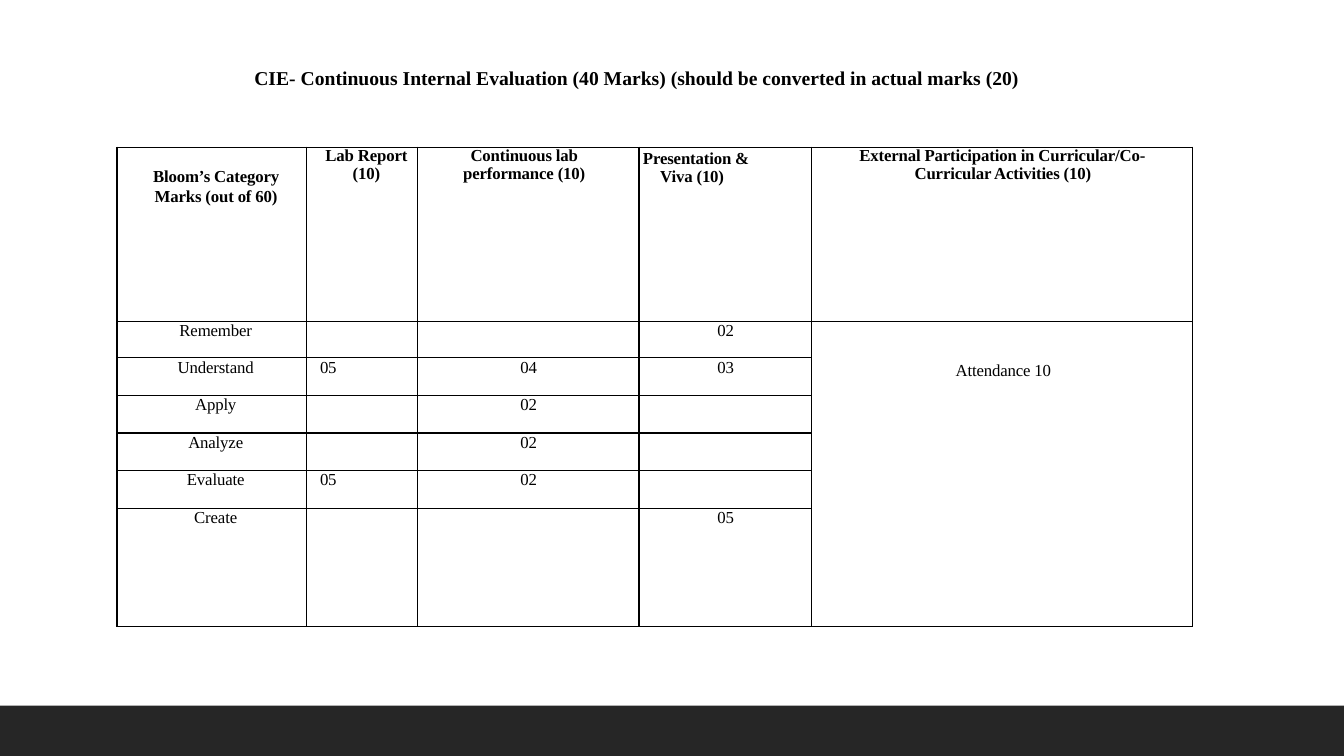
from dataclasses import dataclass

from lxml import etree
from pptx import Presentation
from pptx.dml.color import RGBColor
from pptx.enum.shapes import MSO_SHAPE
from pptx.enum.text import PP_ALIGN
from pptx.oxml.ns import qn
from pptx.util import Pt

LEFT, CENTER = PP_ALIGN.LEFT, PP_ALIGN.CENTER
RECTANGLE = MSO_SHAPE.RECTANGLE


@dataclass(frozen=True)
class Theme:
    font: str = "Times New Roman"
    ink: RGBColor = RGBColor(0, 0, 0)
    bar: RGBColor = RGBColor(0x26, 0x26, 0x26)
    title_size: float = 14
    table_size: float = 12
    border_width: float = 1


@dataclass(frozen=True)
class Line:
    """One paragraph; lengths in points, line as Pt or as a multiple."""
    text: str
    bold: bool = False
    align: PP_ALIGN = CENTER
    left: float = 0
    right: float = 0
    first: float = 0
    line: float | Pt = 1.0
    tracking: float = -0.1


@dataclass(frozen=True)
class Entry:
    row: int
    col: int
    lines: tuple[Line, ...]
    top: float = 0.3


THEME = Theme()
COL_WIDTHS = (135.4, 79.2, 158.4, 123.1, 272.2)
ROW_HEIGHTS = (124.4, 26, 26.9, 26.9, 26.9, 26.9, 84.4)
CATEGORIES = ("Remember", "Understand", "Apply", "Analyze", "Evaluate", "Create")
LAB_REPORT, LAB_WORK, VIVA, EXTERNAL = 1, 2, 3, 4
MARKS = {
    LAB_REPORT: {2: "05", 5: "05"},
    LAB_WORK: {2: "04", 3: "02", 4: "02", 5: "02"},
    VIVA: {1: "02", 2: "03", 6: "05"},
}
HEADERS = (
    Entry(0, 0, (Line("Bloom’s Category Marks (out of 60)", True, left=19.4, right=13,
                      line=Pt(13.8)),), top=14.4),
    Entry(0, LAB_REPORT, (Line("Lab Report (10)", True, left=10, right=3.6, line=0.96),),
          top=0.1),
    Entry(0, LAB_WORK, (Line("Continuous lab performance (10)", True, left=8, right=13.7,
                             line=0.96),), top=0.1),
    Entry(0, VIVA, (Line("Presentation &", True, LEFT, left=30.2, first=-27.4,
                         line=Pt(13.9)),
                    Line("Viva (10)", True, LEFT, left=15.1, line=Pt(13.4))), top=0.8),
    Entry(0, EXTERNAL, (Line("External Participation in Curricular/Co-Curricular Activities (10)",
                             True, left=20.2, right=18.7, first=-0.7, line=0.96),), top=0.1),
)
ATTENDANCE = Entry(1, EXTERNAL, (Line("Attendance 10", left=58.3, right=56.2,
                                      line=Pt(13.8)),), top=28)


def write(p, text: str, *, size: float, bold: bool = False, align: PP_ALIGN = LEFT,
          left: float = 0, right: float = 0, first: float = 0,
          line: float | Pt = 1.0, tracking: float = 0) -> None:
    p.alignment, p.line_spacing = align, line
    props = p._p.get_or_add_pPr()
    for name, value in (("marL", left), ("marR", right), ("indent", first)):
        props.set(name, str(Pt(value)))
    r = p.add_run()
    r.text = text
    r.font.name, r.font.size, r.font.bold = THEME.font, Pt(size), bold
    r.font.color.rgb = THEME.ink
    r._r.get_or_add_rPr().set("spc", str(round(tracking * 100)))


def style_cell(cell) -> None:
    cell.margin_left = cell.margin_right = cell.margin_top = cell.margin_bottom = 0
    props = cell._tc.get_or_add_tcPr()
    for side in ("lnL", "lnR", "lnT", "lnB"):
        ln = etree.SubElement(props, qn(f"a:{side}"), w=str(Pt(THEME.border_width)))
        fill = etree.SubElement(ln, qn("a:solidFill"))
        etree.SubElement(fill, qn("a:srgbClr"), val=str(THEME.ink))
    cell.fill.background()


def fill_cell(table, entry: Entry) -> None:
    cell = table.cell(entry.row, entry.col)
    cell.margin_top = Pt(entry.top)
    tf = cell.text_frame
    for i, item in enumerate(entry.lines):
        p = tf.add_paragraph() if i else tf.paragraphs[0]
        write(p, item.text, size=THEME.table_size, bold=item.bold, align=item.align,
              left=item.left, right=item.right, first=item.first,
              line=item.line, tracking=item.tracking)


def body_entries() -> list[Entry]:
    entries = [Entry(row, 0, (Line(name, left=5.8),))
               for row, name in enumerate(CATEGORIES, 1)]
    for col, marks in MARKS.items():
        align, left = (LEFT, 9.7) if col == LAB_REPORT else (CENTER, 0.7)
        entries += [Entry(row, col, (Line(mark, align=align, left=left, tracking=-0.2),))
                    for row, mark in marks.items()]
    return entries


def add_bar(s) -> None:
    sp = s.shapes.add_shape(RECTANGLE, 0, Pt(504), Pt(960), Pt(36))
    sp.shadow.inherit = False
    sp.fill.solid()
    sp.fill.fore_color.rgb = THEME.bar
    sp.line.fill.background()


def add_title(s) -> None:
    tf = s.shapes.add_textbox(Pt(181), Pt(46.1), Pt(612), Pt(17.3)).text_frame
    tf.word_wrap = True
    tf.margin_left = tf.margin_right = tf.margin_bottom = 0
    tf.margin_top = Pt(1.3)
    write(tf.paragraphs[0],
          "CIE- Continuous Internal Evaluation (40 Marks) "
          "(should be converted in actual marks (20)",
          size=THEME.title_size, bold=True, left=0.7)


def add_marks_table(s) -> None:
    table = s.shapes.add_table(len(ROW_HEIGHTS), len(COL_WIDTHS), Pt(83.5), Pt(105.1),
                               Pt(sum(COL_WIDTHS)), Pt(sum(ROW_HEIGHTS))).table
    table.first_row = table.horz_banding = False
    for column, width in zip(table.columns, COL_WIDTHS):
        column.width = Pt(width)
    for row, height in zip(table.rows, ROW_HEIGHTS):
        row.height = Pt(height)
    for cell in table.iter_cells():
        style_cell(cell)
    table.cell(1, EXTERNAL).merge(table.cell(len(CATEGORIES), EXTERNAL))
    for entry in (*HEADERS, *body_entries(), ATTENDANCE):
        fill_cell(table, entry)


def main() -> None:
    prs = Presentation()
    prs.slide_width, prs.slide_height = Pt(960), Pt(540)
    s = prs.slides.add_slide(prs.slide_layouts[6])
    add_bar(s)
    add_title(s)
    add_marks_table(s)
    prs.save("out.pptx")


if __name__ == "__main__":
    main()
